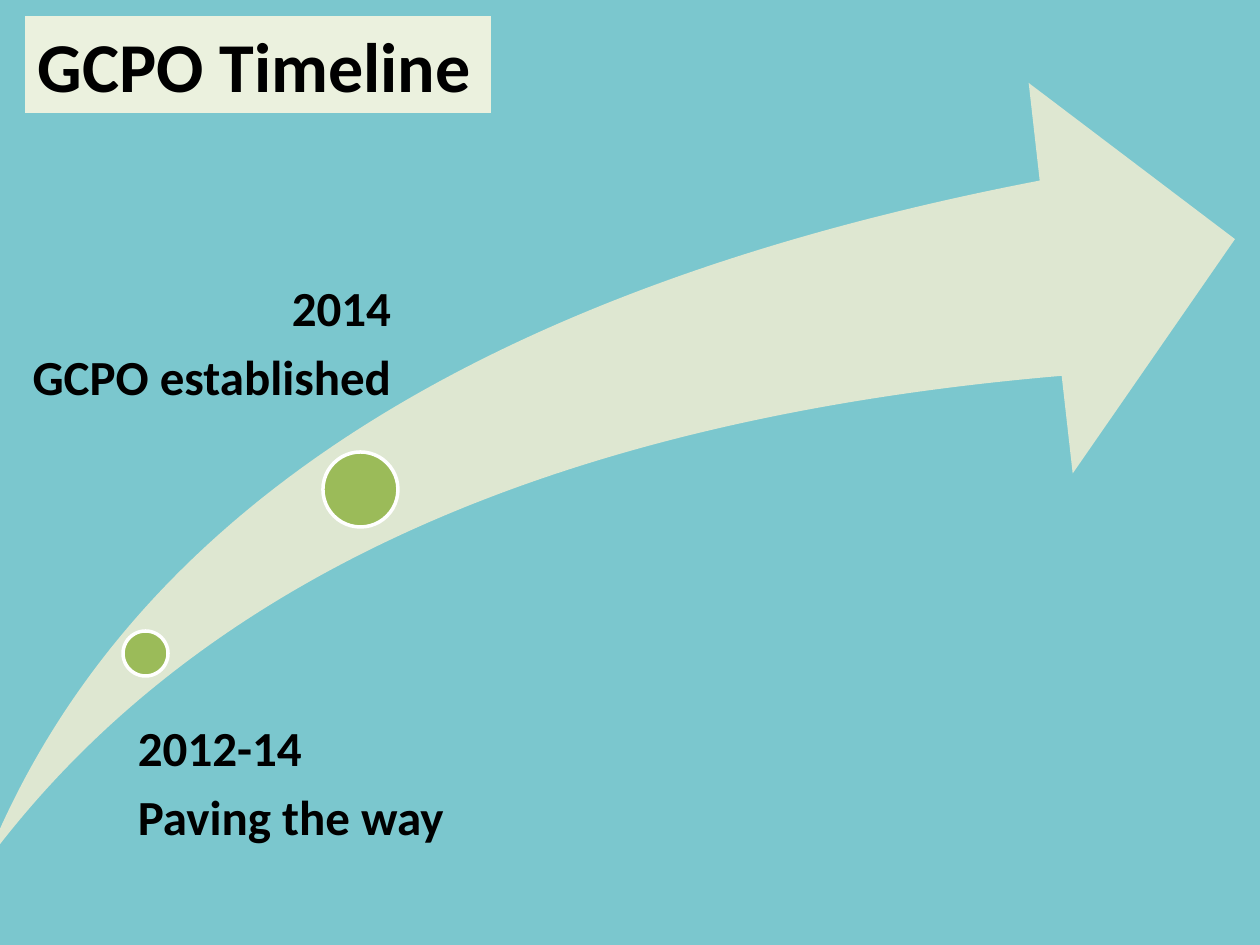
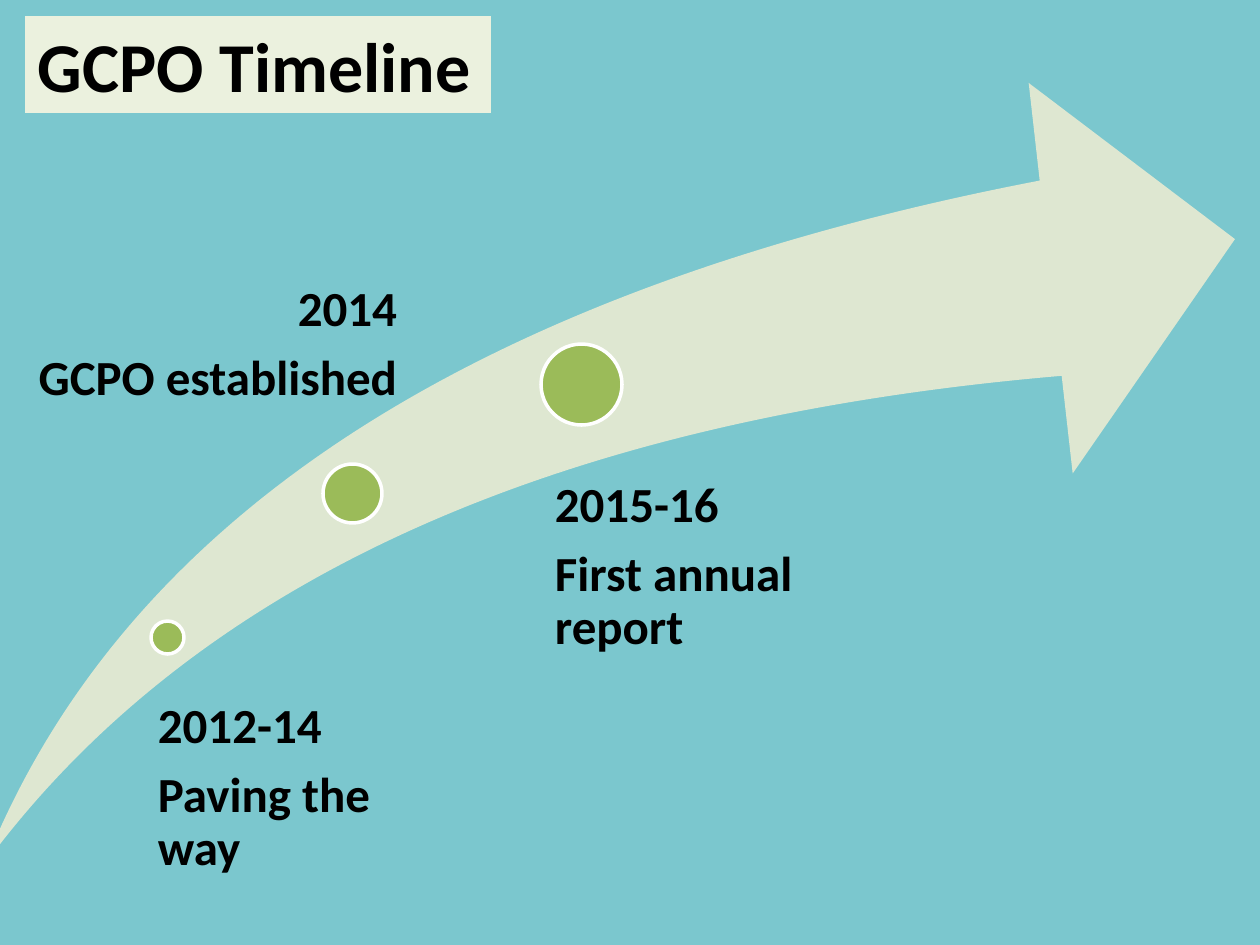
import dataclasses
import pptx
import pptx.dml.color
import pptx.enum.shapes
import pptx.enum.text
import pptx.util

EMU_PER_PX = 914400 / 126
PAGE_SIZE = (1260, 945)
TITLE_BOX = (25, 16, 466, 97)
TIMELINE_BOX = (-15, 83, 1250, 781)
FONT = "Calibri"
SEA, SAND, CREAM = "7BC7CE", "DEE7D1", "EBF1DE"
GREEN, WHITE, BLACK = "9BBB59", "FFFFFF", "000000"
SHAPE = pptx.enum.shapes.MSO_SHAPE
ALIGN = pptx.enum.text.PP_ALIGN
ANCHOR = pptx.enum.text.MSO_ANCHOR


@dataclasses.dataclass
class Milestone:
    """A dot and its label, both placed from the timeline's top left corner."""
    date: str
    event: str
    dot: tuple
    label: tuple
    inset: int
    align: object = ALIGN.LEFT


PAGES = [
    [
        Milestone("2012-14", "Paving the way", (138, 548, 45), (130, 641, 406, 175), 23),
        Milestone("2014", "GCPO established", (338, 369, 75), (0, 201, 406, 518), 40, ALIGN.RIGHT),
    ],
    [
        Milestone("2012-14", "Paving the way", (166, 538, 33), (155, 618, 291, 186), 18),
        Milestone("2014", "GCPO established", (338, 381, 59), (0, 201, 412, 425), 32, ALIGN.RIGHT),
        Milestone("2015-16", "First annual report", (556, 261, 81), (527, 397, 300, 437), 43),
    ],
]


def emu(*lengths):
    """Turn px lengths into a list of EMU."""
    return [pptx.util.Emu(round(length * EMU_PER_PX)) for length in lengths]


def paint(fill, colour):
    """Fill with a solid hex colour."""
    fill.solid()
    fill.fore_color.rgb = pptx.dml.color.RGBColor.from_string(colour)


def write(para, text, size):
    """Add one bold black run to a paragraph."""
    span = para.add_run()
    span.text = text
    span.font.name = FONT
    span.font.size = pptx.util.Pt(size)
    span.font.bold = True
    paint(span.font.fill, BLACK)


def add_figure(page, preset, box, colour):
    """Add a flat preset shape without an outline."""
    figure = page.shapes.add_shape(preset, *emu(*box))
    figure.shadow.inherit = False
    paint(figure.fill, colour)
    figure.line.fill.background()
    return figure


def add_title(page, box, text):
    """Move the title placeholder into its cream box and write it."""
    title = page.shapes.title
    title.left, title.top, title.width, title.height = emu(*box)
    paint(title.fill, CREAM)
    frame = title.text_frame
    frame.auto_size = pptx.enum.text.MSO_AUTO_SIZE.NONE
    frame.word_wrap = True
    frame.vertical_anchor = ANCHOR.TOP
    para = frame.paragraphs[0]
    para.alignment = ALIGN.LEFT
    write(para, text, 40)


def add_label(page, box, milestone):
    """Write the date and the event of a milestone."""
    frame = page.shapes.add_textbox(*emu(*box)).text_frame
    frame.word_wrap = True
    frame.vertical_anchor = ANCHOR.TOP
    frame.margin_left, = emu(milestone.inset)
    frame.margin_top = frame.margin_right = frame.margin_bottom = 0
    for index, text in enumerate((milestone.date, milestone.event)):
        para = frame.add_paragraph() if index else frame.paragraphs[0]
        para.alignment = milestone.align
        para.line_spacing = 0.9
        para.space_after = pptx.util.Pt(9.2)
        write(para, text, 28)


def add_timeline(page, box, milestones):
    """Draw the swoosh arrow with its milestones."""
    left, top, width, height = box
    arrow = add_figure(page, SHAPE.SWOOSH_ARROW, box, SAND)
    arrow.adjustments[0] = arrow.adjustments[1] = 0.25
    for milestone in milestones:
        x, y, size = milestone.dot
        dot = add_figure(page, SHAPE.OVAL, (left + x, top + y, size, size), GREEN)
        paint(dot.line.fill, WHITE)
        dot.line.width = pptx.util.Pt(2)
        x, y, width, height = milestone.label
        add_label(page, (left + x, top + y, width, height), milestone)


def add_timeline_page(deck, milestones):
    """Add one timeline slide."""
    page = deck.slides.add_slide(deck.slide_layouts.get_by_name("Title Only"))
    paint(page.background.fill, SEA)
    add_title(page, TITLE_BOX, "GCPO Timeline")
    add_timeline(page, TIMELINE_BOX, milestones)


def main():
    """Build and save the deck."""
    deck = pptx.Presentation()
    deck.slide_width, deck.slide_height = emu(*PAGE_SIZE)
    for milestones in PAGES:
        add_timeline_page(deck, milestones)
    deck.save("out.pptx")


if __name__ == "__main__":
    main()
